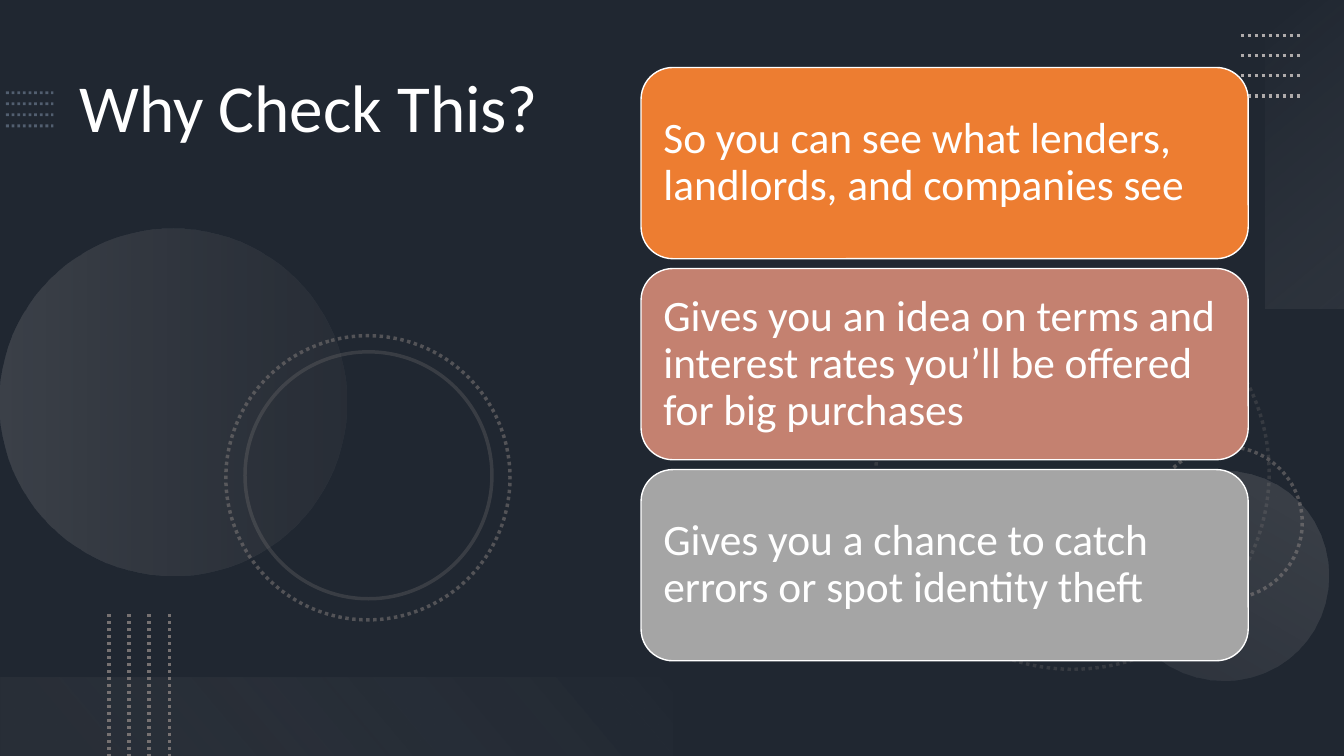
from lxml import etree
from pptx import Presentation
from pptx.dml.color import RGBColor
from pptx.enum.dml import MSO_LINE
from pptx.enum.shapes import MSO_CONNECTOR, MSO_SHAPE
from pptx.enum.text import MSO_ANCHOR, PP_ALIGN
from pptx.oxml import parse_xml
from pptx.oxml.ns import nsdecls, qn
from pptx.util import Pt

DOTTED = MSO_LINE.ROUND_DOT
RECTANGLE, ELLIPSE = MSO_SHAPE.RECTANGLE, MSO_SHAPE.OVAL
ROUNDED = MSO_SHAPE.ROUNDED_RECTANGLE
STRAIGHT = MSO_CONNECTOR.STRAIGHT
FONT = "Calibri"
COLORS = {
    "slate": "44546A", "black": "000000", "white": "FFFFFF",
    "blue": "8497B0", "gray": "767171", "silver": "AFABAB",
    "mist": "F5F5F5", "pale": "F1F0F0",
    "orange": "ED7D31", "rose": "C48170", "ash": "A5A5A5",
}


def color(name):
    return RGBColor.from_string(COLORS[name])


def set_alpha(shape, percent):
    for element in shape._element.spPr.iter(qn("a:srgbClr")):
        etree.SubElement(element, qn("a:alpha"), val=str(percent * 1000))


presentation = Presentation()
presentation.slide_width, presentation.slide_height = Pt(960), Pt(540)
slide = presentation.slides.add_slide(presentation.slide_layouts[6])
shapes = slide.shapes

# Background with a dark veil
slide.background.fill.solid()
slide.background.fill.fore_color.rgb = color("slate")
veil = shapes.add_shape(RECTANGLE, 0, 0, Pt(960), Pt(540))
veil.shadow.inherit = False
veil.line.fill.background()
veil.fill.solid()
veil.fill.fore_color.rgb = color("black")
set_alpha(veil, 53)

# Rings: left, top, diameter, color opacity, dotted
rings = [
    (625.7, 197.3, 280.8, 25, True),
    (821.5, 319, 108.7, 60, True),
    (161.3, 239.8, 203, 60, True),
    (175, 251.3, 176.4, 30, False),
]
for left, top, diameter, opacity, dotted in rings:
    ring = shapes.add_shape(ELLIPSE, Pt(left), Pt(top), Pt(diameter), Pt(diameter))
    ring.shadow.inherit = False
    ring.rotation = 75
    ring.fill.background()
    ring.line.color.rgb = color("gray")
    ring.line.width = Pt(2.5)
    if dotted:
        ring.line.dash_style = DOTTED
    set_alpha(ring, opacity)

# Soft gradients: kind, frame, rotation, angle, stops (position, color, opacity)
gradients = [
    (ELLIPSE, (0, 163.1, 247.7, 247.7), 270, 90, [(0, "silver", 20), (100, "gray", 10)]),
    (ELLIPSE, (799.2, 336.2, 149.8, 149.8), 210, 90, [(0, "silver", 10), (100, "silver", 20)]),
    (RECTANGLE, (821.9, 82.2, 220.3, 56), 270, 140, [(0, "mist", 0), (100, "silver", 10)]),
    (RECTANGLE, (0, 483.8, 480.2, 56.2), 180, 140, [(10, "gray", 10), (100, "pale", 0)]),
]
for kind, frame, rotation, angle, stops in gradients:
    shade = shapes.add_shape(kind, *map(Pt, frame))
    shade.shadow.inherit = False
    shade.rotation = rotation
    shade.line.fill.background()
    shade.fill.gradient()
    stop_xml = "".join(
        f'<a:gs pos="{position * 1000}"><a:srgbClr val="{COLORS[name]}">'
        f'<a:alpha val="{opacity * 1000}"/></a:srgbClr></a:gs>'
        for position, name, opacity in stops)
    properties = shade._element.spPr
    properties.replace(properties.find(qn("a:gradFill")), parse_xml(
        f'<a:gradFill {nsdecls("a")} rotWithShape="1"><a:gsLst>{stop_xml}</a:gsLst>'
        f'<a:lin ang="{angle * 60000}" scaled="0"/></a:gradFill>'))

# Dotted line sets of four: first line, step, color, width, opacity
line_sets = [
    ((4.3, 66.2, 38.2, 66.2), (0, 7.9), "blue", 2, 50),
    ((886.3, 25.2, 929.5, 25.2), (0, 14.4), "silver", 2.5, 100),
    ((77.8, 438.5, 77.8, 540), (14.4, 0), "gray", 2.5, 100),
]
for (x1, y1, x2, y2), (dx, dy), name, width, opacity in line_sets:
    for i in range(4):
        line = shapes.add_connector(STRAIGHT, Pt(x1 + i * dx), Pt(y1 + i * dy),
                                    Pt(x2 + i * dx), Pt(y2 + i * dy))
        line.line.color.rgb = color(name)
        line.line.width = Pt(width)
        line.line.dash_style = DOTTED
        etree.SubElement(line._element.spPr, qn("a:effectLst"))
        if opacity < 100:
            set_alpha(line, opacity)

# Title
title = shapes.add_textbox(Pt(49.7), Pt(49.7), Pt(389.5), Pt(434.2))
title.text_frame.word_wrap = True
paragraph = title.text_frame.paragraphs[0]
paragraph.text = "Why Check This?"
paragraph.line_spacing = 0.9
paragraph.font.name, paragraph.font.size = FONT, Pt(48)
paragraph.font.color.rgb = color("white")

# Reason cards
reasons = [
    ("orange", "So you can see what lenders, landlords, and companies see"),
    ("rose", "Gives you an idea on terms and interest rates you’ll be offered for big purchases"),
    ("ash", "Gives you a chance to catch errors or spot identity theft"),
]
for i, (name, text) in enumerate(reasons):
    card = shapes.add_shape(ROUNDED, Pt(457.9), Pt(48.2 + i * 143.6), Pt(433.7), Pt(136.6))
    card.shadow.inherit = False
    card.fill.solid()
    card.fill.fore_color.rgb = color(name)
    card.line.color.rgb = color("white")
    card.line.width = Pt(1)
    frame = card.text_frame
    frame.word_wrap = True
    frame.vertical_anchor = MSO_ANCHOR.MIDDLE
    frame.margin_left = frame.margin_right = Pt(9.3)
    frame.margin_top = frame.margin_bottom = Pt(9.3)
    paragraph = frame.paragraphs[0]
    paragraph.text = text
    paragraph.alignment = PP_ALIGN.LEFT
    paragraph.line_spacing = 0.9
    paragraph.font.name, paragraph.font.size = FONT, Pt(31)
    paragraph.font.color.rgb = color("white")

presentation.save("out.pptx")
